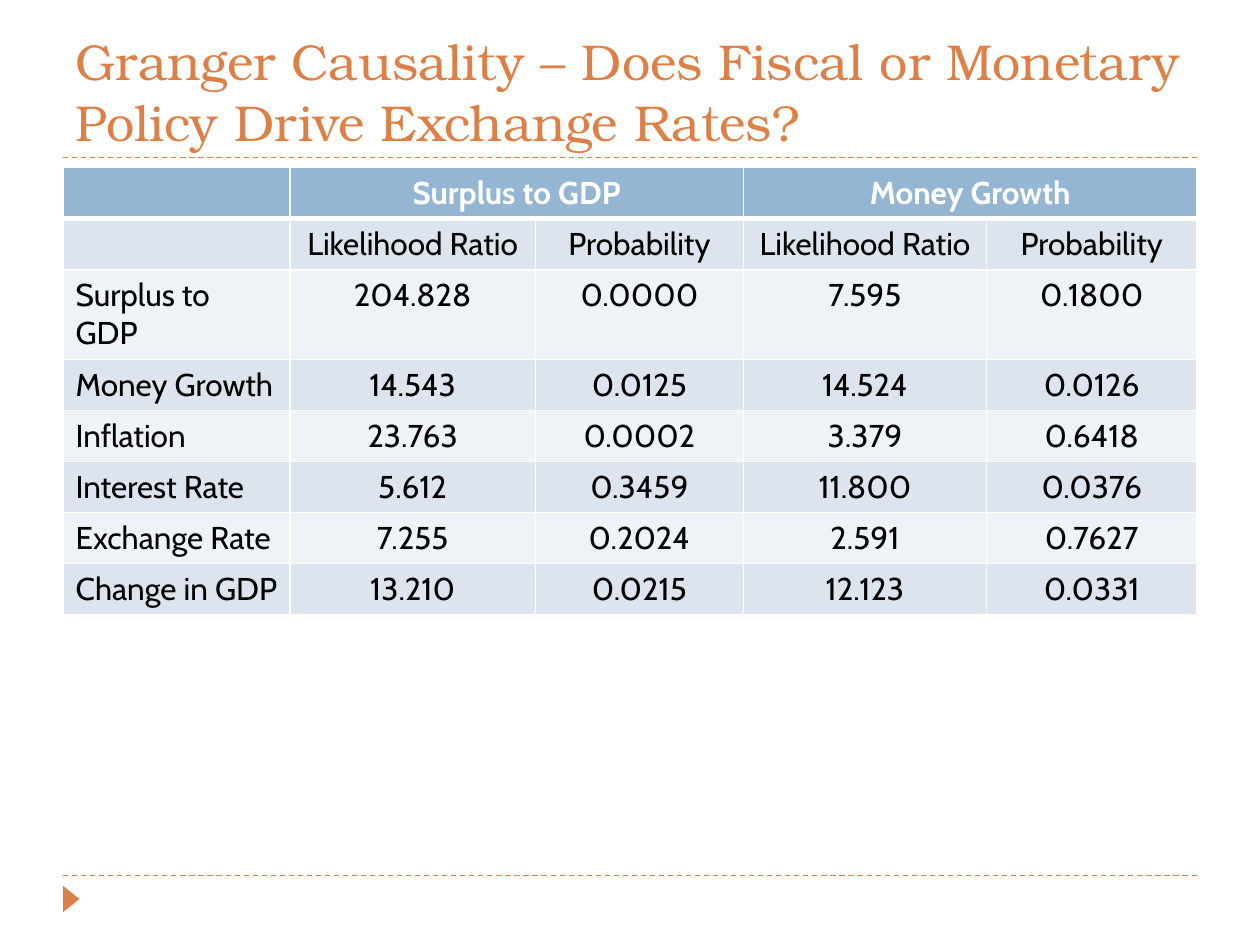
from lxml import etree
from pptx import Presentation
from pptx.dml.color import RGBColor
from pptx.enum.dml import MSO_LINE
from pptx.enum.shapes import MSO_CONNECTOR, MSO_SHAPE
from pptx.enum.text import MSO_ANCHOR, PP_ALIGN
from pptx.oxml.ns import qn
from pptx.util import Inches, Pt

DASH = MSO_LINE.DASH
STRAIGHT = MSO_CONNECTOR.STRAIGHT
TRIANGLE = MSO_SHAPE.ISOSCELES_TRIANGLE
BOTTOM = MSO_ANCHOR.BOTTOM
LEFT, CENTER = PP_ALIGN.LEFT, PP_ALIGN.CENTER
TITLE_ONLY = 5

COLORS = {
    "accent": "DD8047",
    "header": "94B6D2",
    "band_dark": "DCE5EE",
    "band_light": "EEF3F7",
    "white": "FFFFFF",
    "text": "000000",
}
TITLE_FONT = "TeX Gyre Bonum"
BODY_FONT = "Cabin"

TITLE = "Granger Causality – Does Fiscal or Monetary Policy Drive Exchange Rates?"
COLUMN_WIDTHS = [1.8, 1.95, 1.65, 1.93, 1.67]
ROWS = [
    ["", "Surplus to GDP", "", "Money Growth", ""],
    ["", "Likelihood Ratio", "Probability", "Likelihood Ratio", "Probability"],
    ["Surplus to GDP", "204.828", "0.0000", "7.595", "0.1800"],
    ["Money Growth", "14.543", "0.0125", "14.524", "0.0126"],
    ["Inflation", "23.763", "0.0002", "3.379", "0.6418"],
    ["Interest Rate", "5.612", "0.3459", "11.800", "0.0376"],
    ["Exchange Rate", "7.255", "0.2024", "2.591", "0.7627"],
    ["Change in GDP", "13.210", "0.0215", "12.123", "0.0331"],
]


def rgb(name):
    return RGBColor.from_string(COLORS[name])


def write_text(frame, text, *, font, size, color, bold=False, align=LEFT):
    para = frame.paragraphs[0]
    para.alignment = align
    span = para.add_run()
    span.text = text
    span.font.name = font
    span.font.size = Pt(size)
    span.font.bold = bold
    span.font.color.rgb = rgb(color)


def add_rule(page, y):
    rule = page.shapes.add_connector(
        STRAIGHT, Inches(0.5), Inches(y), Inches(9.5), Inches(y)
    )
    rule.line.color.rgb = rgb("accent")
    rule.line.width = Pt(0.75)
    rule.line.dash_style = DASH
    etree.SubElement(rule._element.spPr, qn("a:effectLst"))


def add_marker(page):
    marker = page.shapes.add_shape(
        TRIANGLE, Inches(0.46), Inches(7.07), Inches(0.21), Inches(0.13)
    )
    marker.rotation = 90
    marker.shadow.inherit = False
    marker.fill.solid()
    marker.fill.fore_color.rgb = rgb("accent")
    marker.line.fill.background()


def set_title(page):
    title = page.shapes.title
    title.left, title.top = Inches(0.5), Inches(0.17)
    title.width, title.height = Inches(9), Inches(1.08)
    frame = title.text_frame
    frame.word_wrap = True
    frame.vertical_anchor = BOTTOM
    write_text(frame, TITLE, font=TITLE_FONT, size=28.8, color="accent")


def set_borders(cell, widths):
    properties = cell._tc.get_or_add_tcPr()
    for side, width in widths.items():
        line = etree.SubElement(properties, qn(f"a:ln{side}"), w=str(Pt(width)))
        fill = etree.SubElement(line, qn("a:solidFill"))
        etree.SubElement(fill, qn("a:srgbClr"), val=COLORS["white"])


def format_cell(cell, text, row, column):
    is_header = row == 0
    top = 3 if row == 1 else 1
    bottom = 3 if is_header else 1
    set_borders(cell, {"L": 1, "R": 1, "T": top, "B": bottom})
    band = "band_dark" if row % 2 else "band_light"
    cell.fill.solid()
    cell.fill.fore_color.rgb = rgb("header" if is_header else band)
    if text:
        write_text(
            cell.text_frame,
            text,
            font=BODY_FONT,
            size=18,
            color="white" if is_header else "text",
            bold=is_header,
            align=CENTER if column else LEFT,
        )


def add_results_table(page):
    table = page.shapes.add_table(
        len(ROWS), len(COLUMN_WIDTHS),
        Inches(0.5), Inches(1.33), Inches(9), Inches(3.24),
    ).table
    for column, width in zip(table.columns, COLUMN_WIDTHS):
        column.width = Inches(width)
    for row, values in enumerate(ROWS):
        for column, text in enumerate(values):
            format_cell(table.cell(row, column), text, row, column)
    for first in (1, 3):
        table.cell(0, first).merge(table.cell(0, first + 1))


def main():
    deck = Presentation()
    deck.slide_width, deck.slide_height = Inches(10), Inches(7.5)
    page = deck.slides.add_slide(deck.slide_layouts[TITLE_ONLY])
    for y in (6.95, 1.25):
        add_rule(page, y)
    add_marker(page)
    set_title(page)
    add_results_table(page)
    deck.save("out.pptx")


if __name__ == "__main__":
    main()
